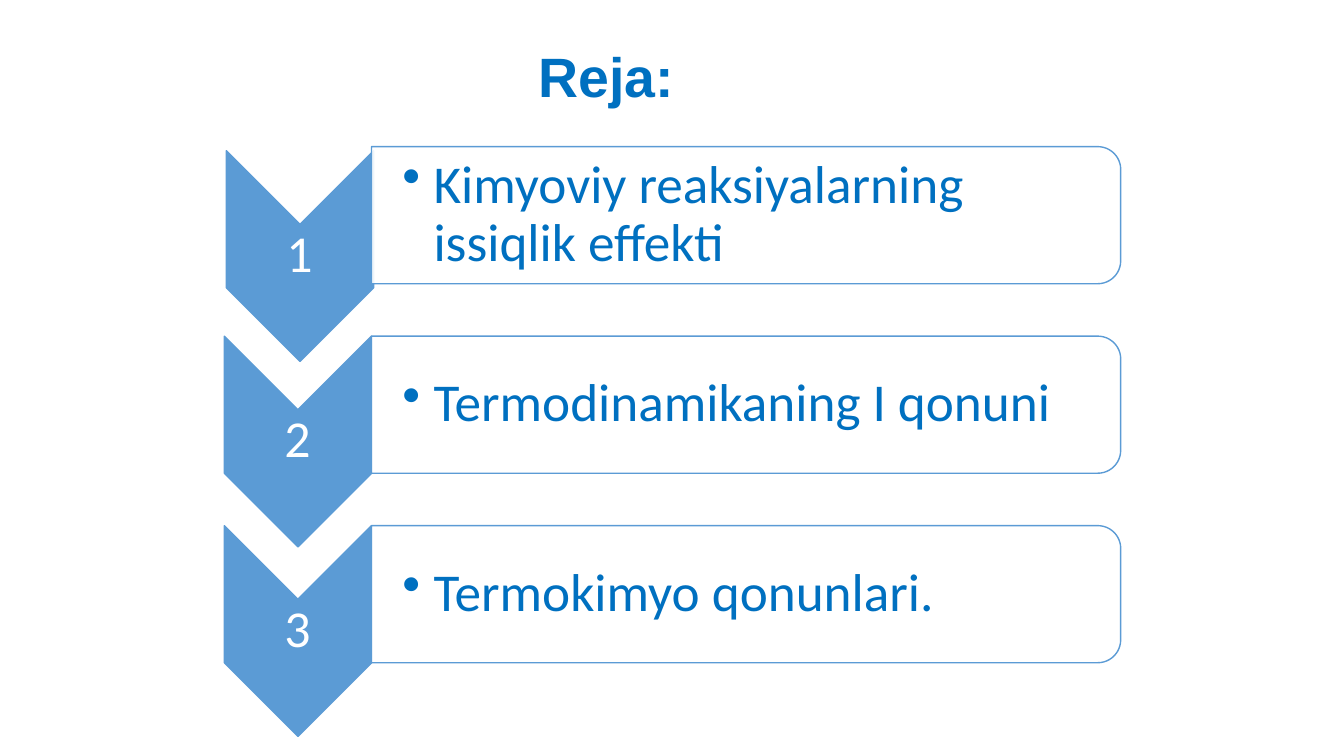
import pptx
import pptx.dml.color
import pptx.enum.shapes
import pptx.enum.text
import pptx.oxml.ns
import pptx.util
from lxml import etree

SHAPES = pptx.enum.shapes.MSO_SHAPE
ANCHOR = pptx.enum.text.MSO_ANCHOR
ALIGN = pptx.enum.text.PP_ALIGN
PLAN = [
    "Kimyoviy reaksiyalarning issiqlik effekti",
    "Termodinamikaning I qonuni",
    "Termokimyo qonunlari.",
]


def px(length):
    """100 px to the inch."""
    return pptx.util.Emu(length * 9144)


def rgb(hex_colour):
    return pptx.dml.color.RGBColor.from_string(hex_colour)


class PlanSlide:
    BLUE, INK, WHITE = "5B9BD5", "0070C0", "FFFFFF"

    def __init__(self, deck):
        self.slide = deck.slides.add_slide(deck.slide_layouts[6])

    def upright(self, preset, left, top, width, height, fill, alpha=100):
        """Preset shape turned a quarter; the frame is given before turning."""
        shape = self.slide.shapes.add_shape(
            preset, px(left), px(top), px(width), px(height))
        shape.rotation = 90
        shape.shadow.inherit = False
        shape.fill.solid()
        shape.fill.fore_color.rgb = rgb(fill)
        shape.line.color.rgb = rgb(self.BLUE)
        shape.line.width = pptx.util.Pt(1)
        if alpha < 100:
            colour = shape.fill._xPr.find(".//" + pptx.oxml.ns.qn("a:srgbClr"))
            etree.SubElement(colour, pptx.oxml.ns.qn("a:alpha"),
                             val=str(alpha * 1000))

    def text(self, words, frame, size, colour, font="Calibri", bold=False,
             align=ALIGN.LEFT, anchor=ANCHOR.MIDDLE, insets=(3, 3, 3, 3)):
        box = self.slide.shapes.add_textbox(*map(px, frame)).text_frame
        box.word_wrap = True
        box.vertical_anchor = anchor
        (box.margin_left, box.margin_top,
         box.margin_right, box.margin_bottom) = map(px, insets)
        paragraph = box.paragraphs[0]
        paragraph.alignment = align
        paragraph.line_spacing = 0.9
        run = paragraph.add_run()
        run.text = words
        run.font.name = font
        run.font.size = pptx.util.Pt(size)
        run.font.bold = bold
        run.font.color.rgb = rgb(colour)
        return paragraph

    def bullet(self, words, frame):
        paragraph = self.text(words, frame, 38, self.INK, insets=(30, 3, 3, 3))
        paragraph.level = 1
        props = paragraph._p.get_or_add_pPr()
        props.set("marL", str(px(31)))
        props.set("indent", str(-px(31)))
        etree.SubElement(props, pptx.oxml.ns.qn("a:buChar"), char="•")

    def step(self, number, words, top, nudge_x=0, nudge_y=0):
        # Numbered chevron
        self.upright(SHAPES.CHEVRON, 191 + nudge_x, top + 32 + nudge_y,
                     209, 146, self.BLUE)
        self.text(str(number), (222 + nudge_x, top + 73 + nudge_y, 146, 63),
                  37, self.WHITE, align=ALIGN.CENTER)
        # Topic bar
        self.upright(SHAPES.ROUND_2_SAME_RECTANGLE, 672, top - 303, 136, 743,
                     self.WHITE, alpha=90)
        self.bullet(words, (369, top + 7, 736, 123))


def main():
    deck = pptx.Presentation()
    deck.slide_width, deck.slide_height = px(1333), px(750)
    plan = PlanSlide(deck)

    # Heading
    plan.text("Reja:", (524, 49, 1333 - 524, 94), 39.6, plan.INK, font="Arial",
              bold=True, anchor=ANCHOR.TOP, insets=(10, 0, 10, 0))

    # Steps; the first chevron sits slightly off the grid
    for index, topic in enumerate(PLAN):
        nudge = (2, 4) if index == 0 else (0, 0)
        plan.step(index + 1, topic, 145 + 188 * index, *nudge)

    deck.save("out.pptx")


if __name__ == "__main__":
    main()
